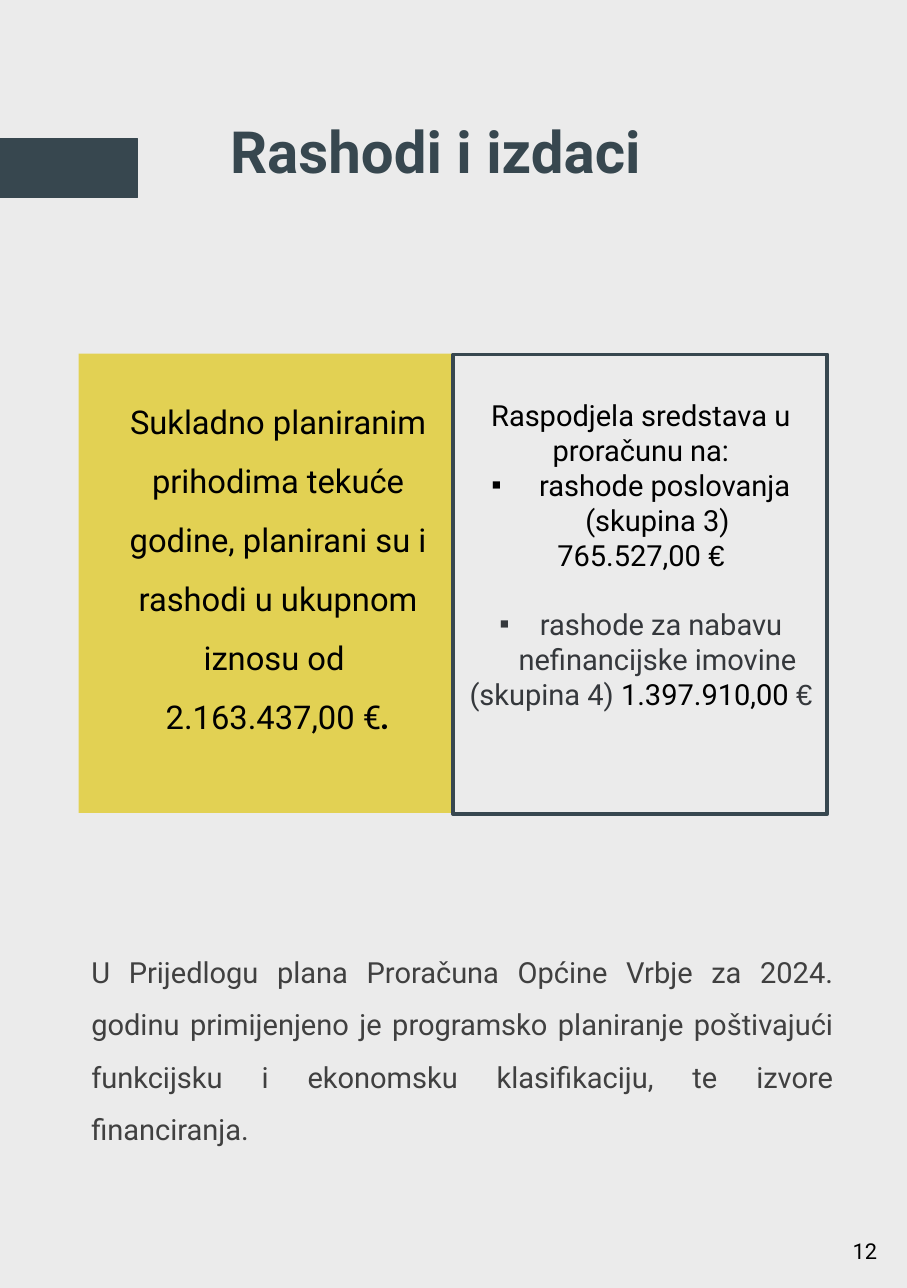
from lxml import etree
from pptx import Presentation
from pptx.dml.color import RGBColor
from pptx.enum.shapes import MSO_SHAPE
from pptx.enum.text import PP_ALIGN
from pptx.oxml.ns import qn
from pptx.util import Pt

RECT = MSO_SHAPE.RECTANGLE
LEFT, MID, JUST = PP_ALIGN.LEFT, PP_ALIGN.CENTER, PP_ALIGN.JUSTIFY

HUES = {
    "back": "EBEBEB",
    "slate": "37474F",
    "gold": "E0CA24",
    "black": "000000",
    "coal": "35383C",
    "gray": "404040",
}


def tint(name):
    return RGBColor.from_string(HUES[name])


def add_rect(slide, box, fill=None, line=None, width=1, alpha=None):
    """Draw a plain rectangle; alpha is its opacity in percent."""
    rect = slide.shapes.add_shape(RECT, *map(Pt, box))
    rect.shadow.inherit = False
    if fill:
        rect.fill.solid()
        rect.fill.fore_color.rgb = tint(fill)
    else:
        rect.fill.background()
    if line:
        rect.line.color.rgb = tint(line)
        rect.line.width = Pt(width)
    else:
        rect.line.fill.background()
    if alpha:
        hue = rect._element.spPr.find(".//" + qn("a:srgbClr"))
        etree.SubElement(hue, qn("a:alpha")).set("val", str(alpha * 1000))


def add_dot(para, indent=22.3):
    """Give a paragraph a square bullet with a hanging indent."""
    props = para._p.get_or_add_pPr()
    props.set("marL", str(Pt(indent)))
    props.set("indent", str(-Pt(indent)))
    etree.SubElement(props, qn("a:buFont")).set("typeface", "Arial")
    etree.SubElement(props, qn("a:buChar")).set("char", "▪")


def add_text(slide, box, paras, size=16, hue="black", bold=False,
             align=LEFT, lead=None):
    """Each paragraph is (runs, options); each run is (text, options)."""
    frame = slide.shapes.add_textbox(*map(Pt, box)).text_frame
    frame.word_wrap = True
    for i, (runs, opts) in enumerate(paras):
        para = frame.add_paragraph() if i else frame.paragraphs[0]
        para.alignment = align
        if lead:
            para.line_spacing = lead
        if "gap" in opts:
            para.space_before = Pt(opts["gap"])
        if opts.get("dot"):
            add_dot(para)
        for text, look in runs:
            run = para.add_run()
            run.text = text
            font = run.font
            font.name = look.get("font", "Roboto")
            font.size = Pt(size)
            font.bold = look.get("bold", bold)
            font.italic = look.get("italic", False)
            font.color.rgb = tint(look.get("hue", hue))


def plain(text):
    return [([(text, {})], {})]


def draw_head(slide, box):
    x, y, w, h = box
    add_rect(slide, (x, y + 16.5, 75.6, 32.4), "slate", "slate", 0.75)
    add_text(slide, (x + 119.5, y, w - 119.5, h), plain("Rashodi i izdaci"),
             size=32, hue="slate", bold=True)


def draw_total(slide, box):
    x, y, w, h = box
    add_rect(slide, box, "gold", alpha=76)
    paras = plain("Sukladno planiranim prihodima tekuće godine, "
                  "planirani su i rashodi u ukupnom iznosu od ")
    paras.append(([("2.163.437,00 €", {}),
                   (".", {"bold": True, "italic": True})], {}))
    add_text(slide, (x + 13.7, y + 12.2, w - 13.7, h - 53), paras,
             size=18, align=MID, lead=1.5)


def draw_split(slide, box):
    x, y, w, h = box
    add_rect(slide, box, line="slate", width=2)
    coal, euro = {"hue": "coal"}, {"font": "Arial"}
    paras = plain("Raspodjela sredstava u proračunu na:") + [
        ([(" rashode poslovanja (skupina 3) ", {})], {"dot": True}),
        ([("765.527,00 ", {}), ("€", euro)], {}),
        ([("rashode za nabavu nefinancijske imovine ", coal)],
         {"dot": True, "gap": 19}),
        ([("(skupina 4) ", coal), ("1.397.910,00 ", {}),
          ("€", {**euro, **coal})], {}),
    ]
    add_text(slide, (x - 5, y + 20.2, w + 10.8, h - 71), paras, align=MID)


def draw_note(slide, box):
    add_text(slide, box, plain(
        "U Prijedlogu plana Proračuna Općine Vrbje za 2024. godinu "
        "primijenjeno je programsko planiranje poštivajući funkcijsku i "
        "ekonomsku klasifikaciju, te izvore financiranja."),
        hue="gray", align=JUST, lead=1.5)


def draw_page(slide, box):
    add_text(slide, box, plain("12"), size=12, align=MID)


def main():
    deck = Presentation()
    deck.slide_width, deck.slide_height = Pt(499), Pt(708.5)
    slide = deck.slides.add_slide(deck.slide_layouts[6])
    slide.background.fill.solid()
    slide.background.fill.fore_color.rgb = tint("back")

    left, top, wide, tall = 43.2, 194.5, 206, 252.7
    draw_head(slide, (0, 59.8, 465.8, 46))
    draw_total(slide, (left, top, wide, tall))
    draw_split(slide, (left + wide, top + 0.5, wide, tall))
    draw_note(slide, (left, 512, 422.6, 90.7))
    draw_page(slide, (452.9, 677.5, 46, 21.6))
    deck.save("out.pptx")


if __name__ == "__main__":
    main()
